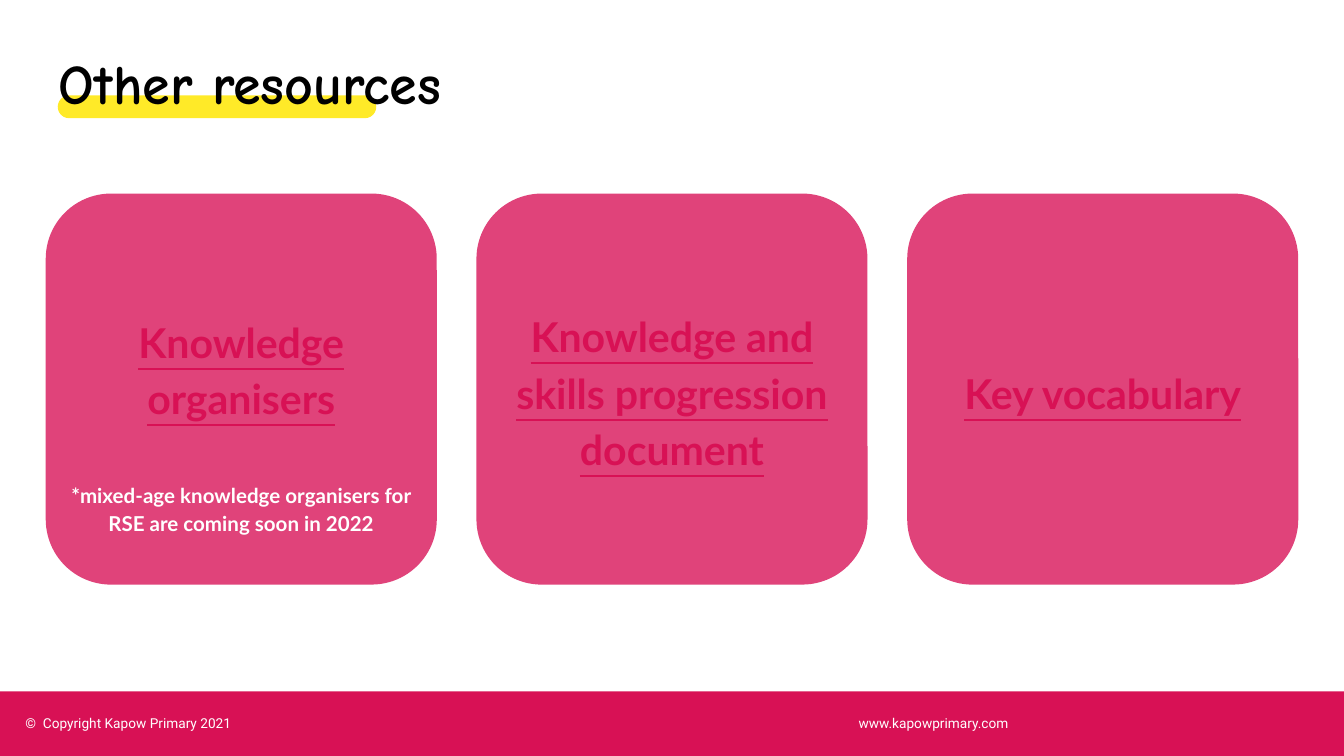
from lxml.etree import SubElement
from pptx import Presentation
from pptx.dml.color import RGBColor
from pptx.enum.shapes import MSO_SHAPE
from pptx.enum.text import MSO_ANCHOR, PP_ALIGN
from pptx.oxml.ns import qn
from pptx.util import Inches, Pt

TITLE = "Other resources"
CARDS = [
    ("Knowledge organisers", "*mixed-age knowledge organisers for RSE are coming soon in 2022"),
    ("Knowledge and skills progression document", None),
    ("Key vocabulary", None),
]
FOOTER = "©  Copyright Kapow Primary 2021\twww.kapowprimary.com"

THEME = {
    "brand": "D81155", "card": "E0437A", "marker": "FFEA28",
    "ink": "000000", "light": "FFFFFF",
    "title_font": "Comic Neue", "body_font": "Lato", "footer_font": "Roboto",
    "title_size": 30, "heading_size": 22, "note_size": 11, "footer_size": 7.3,
}

SLIDE_WIDTH = 10
SLIDE_HEIGHT = SLIDE_WIDTH * 9 / 16
CARD_LEFT, CARD_TOP, CARD_SIZE = 0.34, 1.44, 2.91
CARD_STEP = (SLIDE_WIDTH - 2 * CARD_LEFT - CARD_SIZE) / (len(CARDS) - 1)
FOOTER_HEIGHT = 0.48
INSET, NOTED_CARD_INSET, NOTE_GAP = 0.1, 0.6, 30


def add_block(slide, kind, left, top, width, height, color, corner=None):
    block = slide.shapes.add_shape(
        kind, Inches(left), Inches(top), Inches(width), Inches(height))
    block.shadow.inherit = False
    block.fill.solid()
    block.fill.fore_color.rgb = RGBColor.from_string(color)
    block.line.fill.background()
    if corner is not None:
        block.adjustments[0] = corner


def add_frame(slide, left, top, width, height, top_inset=INSET, anchor=MSO_ANCHOR.MIDDLE):
    frame = slide.shapes.add_textbox(
        Inches(left), Inches(top), Inches(width), Inches(height)).text_frame
    frame.word_wrap = True
    frame.vertical_anchor = anchor
    frame.margin_left = frame.margin_right = frame.margin_bottom = Inches(INSET)
    frame.margin_top = Inches(top_inset)
    return frame


def write(paragraph, text, *, font, size, color, bold=False, underline=False,
          align=PP_ALIGN.LEFT, spacing=None, before=None, tab=None):
    paragraph.alignment = align
    if spacing:
        paragraph.line_spacing = spacing
    if before:
        paragraph.space_before = Pt(before)
    if tab:
        tabs = SubElement(paragraph._p.get_or_add_pPr(), qn("a:tabLst"))
        SubElement(tabs, qn("a:tab"), pos=str(Inches(tab)), algn="l")
    run = paragraph.add_run()
    run.text = text
    run.font.name = font
    run.font.size = Pt(size)
    run.font.bold = bold
    run.font.underline = underline
    run.font.color.rgb = RGBColor.from_string(color)


def add_footer(slide):
    add_block(slide, MSO_SHAPE.RECTANGLE, 0, SLIDE_HEIGHT - FOOTER_HEIGHT,
              SLIDE_WIDTH, FOOTER_HEIGHT, THEME["brand"])
    footer = add_frame(slide, 0.09, 5.19, 8.69, 0.38)
    write(footer.paragraphs[0], FOOTER, font=THEME["footer_font"],
          size=THEME["footer_size"], color=THEME["light"], tab=6.2)


def add_title(slide):
    add_block(slide, MSO_SHAPE.ROUNDED_RECTANGLE, 0.43, 0.71, 2.37, 0.17,
              THEME["marker"], corner=0.5)
    title = add_frame(slide, CARD_LEFT, 0.26, SLIDE_WIDTH - 2 * CARD_LEFT, 0.63,
                      anchor=MSO_ANCHOR.TOP)
    write(title.paragraphs[0], TITLE, font=THEME["title_font"],
          size=THEME["title_size"], color=THEME["ink"], bold=True)


def add_card(slide, left, heading, note):
    area = (left, CARD_TOP, CARD_SIZE, CARD_SIZE)
    add_block(slide, MSO_SHAPE.ROUNDED_RECTANGLE, *area, THEME["card"], corner=0.167)
    frame = add_frame(slide, *area, top_inset=NOTED_CARD_INSET if note else INSET)
    shared = {"font": THEME["body_font"], "bold": True,
              "align": PP_ALIGN.CENTER, "spacing": 1.15}
    write(frame.paragraphs[0], heading, size=THEME["heading_size"],
          color=THEME["brand"], underline=True, **shared)
    if note:
        write(frame.add_paragraph(), note, size=THEME["note_size"],
              color=THEME["light"], before=NOTE_GAP, **shared)


def main():
    deck = Presentation()
    deck.slide_width = Inches(SLIDE_WIDTH)
    deck.slide_height = Inches(SLIDE_HEIGHT)
    slide = deck.slides.add_slide(deck.slide_layouts[6])
    add_footer(slide)
    add_title(slide)
    for index, (heading, note) in enumerate(CARDS):
        add_card(slide, CARD_LEFT + index * CARD_STEP, heading, note)
    deck.save("out.pptx")


if __name__ == "__main__":
    main()
